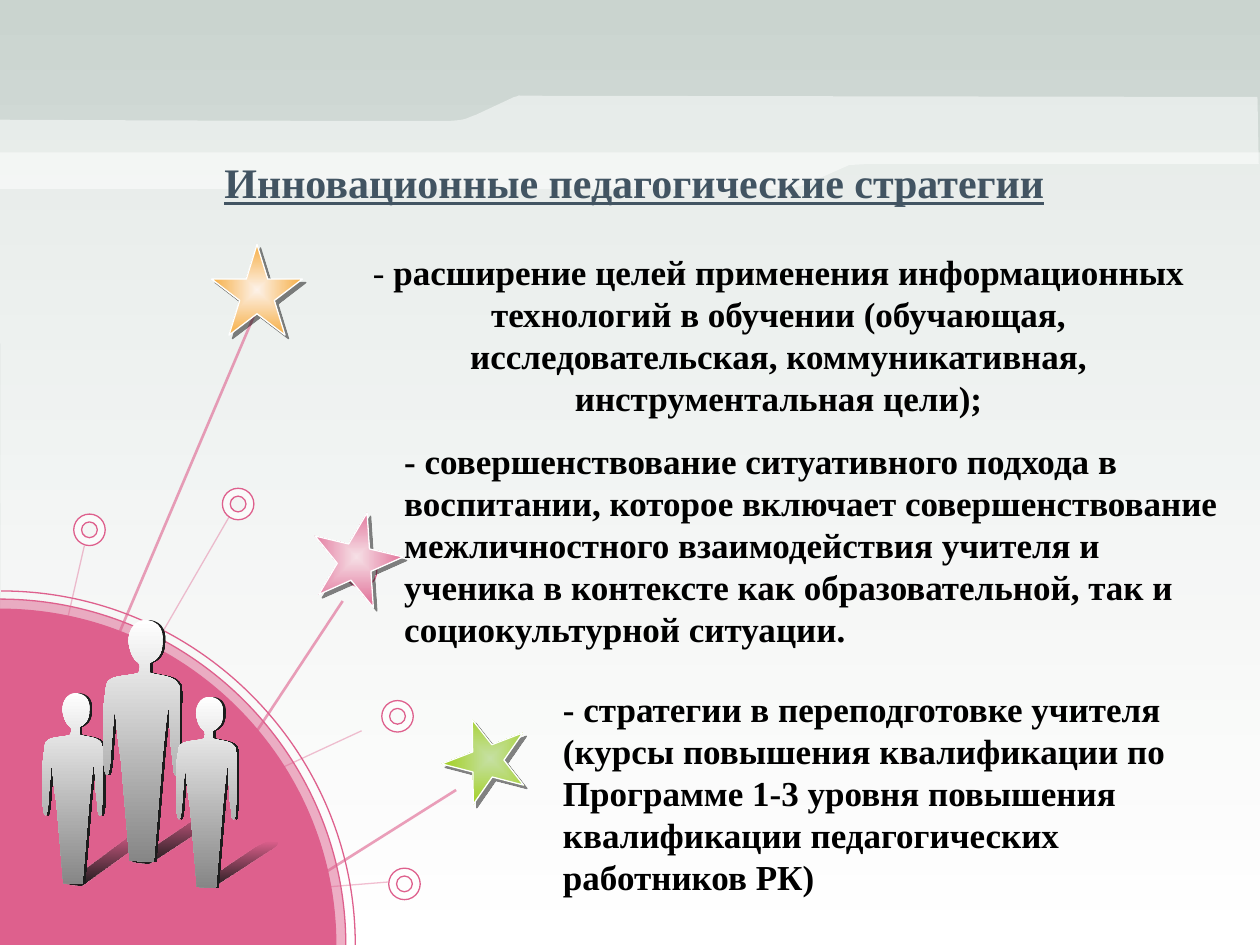
from copy import deepcopy
from dataclasses import dataclass
from typing import Optional

from lxml import etree
from pptx import Presentation, util as u
from pptx.dml.color import RGBColor
from pptx.enum import shapes, text
from pptx.oxml.ns import qn

# The slide is a grid of 100 columns by 75 rows
COLS, ROWS = 100, 75
CELL = u.Inches(0.1)


@dataclass(frozen=True)
class Theme:
    font: str = "Times New Roman"
    title_size: int = 24
    body_size: int = 20
    hairline: float = 0.75
    ray: float = 1.5
    title: str = "425462"
    body: str = "000000"
    pink: str = "DE608D"
    white: str = "FFFFFF"
    sky: str = "CAD4CF"
    star_edge: str = "FEFFFF"
    star_shadow: str = "080808"
    figure_low: str = "868686"
    cast_far: str = "1A1A1A"
    cast_near: str = "1C1C1C"


THEME = Theme()


@dataclass(frozen=True)
class Star:
    col: float
    row: float
    size: float
    turn: float
    core: str
    tip: str


@dataclass(frozen=True)
class Strategy:
    col: float
    row: float
    cols: float
    rows: float
    words: str
    lead: str = ""
    align: Optional[text.PP_ALIGN] = None


@dataclass(frozen=True)
class Ray:
    start: tuple
    end: tuple
    width: float
    opacity: int


@dataclass(frozen=True)
class Person:
    col: float
    row: float
    scale: float
    cast: tuple  # column, row, columns, rows


# Outlines: pairs are straight steps, sixes are cubic curves
HAZE = [(0.1, 74.9), (100.3, 75), (100, 12.1), (0, 12.1)]
RIBBON = [(99.8, 7.7), (42.6, 7.6), (40.1, 7.6, 41.8, 7.5, 40.8, 7.7), (37.8, 9.1),
          (36.9, 9.4, 37.2, 9.5, 35.6, 9.6), (18.7, 9.6, 0, 9.5, 0, 9.5), (0, 15),
          (62.6, 15), (63.8, 14.7), (67.4, 13.1), (69.2, 13), (99.9, 13)]
BODY = [(2.9, 3.4), (2.5, 3.2, 2.2, 2.5, 2.1, 1.7), (2.1, 0.8, 2.6, 0, 3.4, 0),
        (4.3, 0, 4.9, 0.6, 4.8, 1.7), (4.8, 2.8, 4.3, 3.2, 3.8, 3.4),
        (3.8, 3.7, 3.8, 4, 3.8, 4.2), (4.3, 4.4, 5.5, 4.4, 5.9, 4.9),
        (6.3, 5.2, 6.2, 5.9, 6.2, 6.9), (6.2, 10.8), (6.1, 11.8, 6, 12.4, 5.9, 12.3),
        (5.6, 12.5, 5.7, 11.3, 5.5, 10.4), (5.3, 6.8), (5.2, 6.9, 5, 8.8, 4.8, 10.8),
        (4.1, 19.2), (2.2, 19.1), (1.5, 11), (1.1, 8.6, 1.1, 7.1, 1, 7), (0.7, 10.5),
        (0.7, 11.3, 0.5, 12.4, 0.4, 12.3), (0.2, 12.3, 0.1, 11.3, 0.1, 10.3),
        (0, 9.3, 0.1, 7.1, 0.2, 6.2), (0.4, 5.3, 0.2, 5, 0.7, 4.7),
        (1.1, 4.4, 2.5, 4.4, 2.9, 4.2), (3, 4, 3.1, 3.6, 2.9, 3.4)]
CAST = [(0, 0.94), (0.17, 0.98), (0.88, 0.17), (1, 0.02, 0.89, 0.04, 0.87, 0.04),
        (0.83, 0.04, 0.81, 0, 0.67, 0.15)]
QUARTER = [(0, -1), (0.55, -1, 1, -0.55, 1, 0), (0, 0)]

HUB = (0, 72.5)
RAYS = [Ray(start, end, THEME.hairline, 40) for start, end in [
            ((30.8, 70), HUB), ((6.7, 43.3), HUB), ((18.2, 41), HUB), ((28.7, 58), (0, 71.3))]]
RAYS += [Ray(start, end, THEME.ray, 60) for start, end in [
            ((20.4, 24.5), HUB), ((27.2, 47.7), (5.1, 81.2)), ((36.2, 62.7), (5.1, 82.3))]]
RINGS = [(17.65, 38.75), (27.4, 44.1), (30.3, 55.6), (5.85, 40.8), (30.85, 68.9)]
RING_SIZE = 2.5
STARS = [Star(16.8, 19.4, 7.2, 0, "FDF2E9", "F6AE44"),
         Star(24.7, 40.6, 7.2, 13.4, "F6E0E6", "DE608D"),
         Star(35.6, 56.9, 6.6, 51.9, "C6E0A4", "99CC00")]
PEOPLE = [Person(3.3, 55, 0.79, (5.2, 65.7, 7.5, 4.7)),
          Person(8.1, 49.2, 1, (10.4, 64, 8.2, 4.6)),
          Person(13.9, 55.3, 0.79, (15.7, 66.7, 6.8, 3.8))]
STRATEGIES = [
    Strategy(25.6, 19.4, 72.4, 14.5,
             "расширение целей применения информационных технологий в обучении (обучающая, "
             "исследовательская, коммуникативная, инструментальная цели);",
             lead="- ", align=text.PP_ALIGN.CENTER),
    Strategy(31.1, 34.4, 66.9, 17.8,
             "- совершенствование ситуативного подхода в воспитании, которое включает "
             "совершенствование межличностного взаимодействия учителя и ученика в контексте "
             "как образовательной, так и социокультурной ситуации."),
    Strategy(43.7, 54.05, 54.3, 17.8,
             "- стратегии в переподготовке учителя (курсы повышения квалификации по Программе "
             "1-3 уровня повышения квалификации педагогических работников РК)")]


def cells(*counts: float) -> list:
    return [round(count * CELL) for count in counts]


def rgb(code: str) -> RGBColor:
    return RGBColor.from_string(code)


def fade(paint, opacity: int) -> None:
    """Set the opacity, in percent, of the first colour inside paint."""
    colour = next(paint.iter(qn("a:srgbClr")))
    etree.SubElement(colour, qn("a:alpha"), val=str(opacity * 1000))


def paint_solid(shape, colour: str, opacity: int = 100) -> None:
    shape.fill.solid()
    shape.fill.fore_color.rgb = rgb(colour)
    if opacity < 100:
        fade(shape._element.spPr.find(qn("a:solidFill")), opacity)


def paint_gradient(fill, first: str, last: str) -> None:
    fill.gradient()
    fill.gradient_angle = 270
    for stop, colour in zip(fill.gradient_stops, (first, last)):
        stop.color.rgb = rgb(colour)


def outline(shape, colour: str, width: float) -> None:
    shape.line.color.rgb = rgb(colour)
    shape.line.width = u.Pt(width)


def cast_shadow(shape, colour: str, distance: float, angle: int, opacity: int) -> None:
    shape.shadow.inherit = False
    effects = shape._element.spPr.find(qn("a:effectLst"))
    shadow = etree.SubElement(effects, qn("a:outerShdw"), blurRad="0", dist=str(u.Pt(distance)),
                              dir=str(angle * 60000), algn="ctr", rotWithShape="0")
    etree.SubElement(shadow, qn("a:srgbClr"), val=colour)
    fade(shadow, opacity)


def draw_outline(canvas, steps: list, origin=(0, 0), scale=(1, 1)):
    """Draw a closed outline, joining each three points of a curve into one cubic step."""
    spots = [cells(origin[0] + step[i] * scale[0], origin[1] + step[i + 1] * scale[1])
             for step in steps for i in range(0, len(step), 2)]
    builder = canvas.build_freeform(*spots[0], scale=1.0)
    builder.add_line_segments(spots[1:], close=True)
    shape = builder.convert_to_shape()
    segments = iter(list(shape._element.iter(qn("a:lnTo"))))
    for step in steps[1:]:
        parts = [next(segments) for _ in range(len(step) // 2)]
        if len(parts) == 3:
            curve = etree.Element(qn("a:cubicBezTo"))
            parts[0].addprevious(curve)
            for part in parts:
                curve.append(part[0])
                part.getparent().remove(part)
    shape.shadow.inherit = False
    shape.line.fill.background()
    return shape


def draw_quarter(canvas, radius: float, left: float = 0, opacity: int = 0) -> None:
    """Quarter disc in the lower left corner, edged along its arc only."""
    disc = draw_outline(canvas, QUARTER, (left, ROWS), (radius, radius))
    area = next(disc._element.iter(qn("a:path")))
    arc = deepcopy(area)
    for step in arc[2:]:
        arc.remove(step)
    arc.set("fill", "none")
    area.set("stroke", "0")
    area.addprevious(arc)
    if opacity:
        paint_solid(disc, THEME.pink, opacity)
    else:
        disc.fill.background()
    outline(disc, THEME.pink, THEME.hairline)


def draw_ray(canvas, ray: Ray) -> None:
    line = canvas.add_connector(shapes.MSO_CONNECTOR.STRAIGHT, *cells(*ray.start, *ray.end))
    outline(line, THEME.pink, ray.width)
    properties = line._element.spPr
    fade(properties.find(qn("a:ln")), ray.opacity)
    etree.SubElement(properties, qn("a:effectLst"))


def draw_ring(canvas, col: float, row: float) -> None:
    ring = canvas.add_shape(shapes.MSO_SHAPE.DONUT, *cells(col, row, RING_SIZE, RING_SIZE))
    ring.adjustments[0] = 0.25
    ring.shadow.inherit = False
    paint_solid(ring, THEME.white, 60)
    outline(ring, THEME.pink, THEME.hairline)


def draw_star(canvas, star: Star) -> None:
    shape = canvas.add_shape(shapes.MSO_SHAPE.STAR_5_POINT,
                             *cells(star.col, star.row, star.size, star.size))
    shape.rotation = star.turn
    paint_gradient(shape.fill, star.core, star.tip)
    gradient = shape._element.spPr.find(qn("a:gradFill"))
    gradient.remove(gradient.find(qn("a:lin")))
    glow = etree.SubElement(gradient, qn("a:path"), path="shape")
    etree.SubElement(glow, qn("a:fillToRect"), l="50000", t="50000", r="50000", b="50000")
    outline(shape, THEME.star_edge, THEME.hairline)
    cast_shadow(shape, THEME.star_shadow, 2.8, 45, 50)


def draw_people(canvas) -> None:
    group = canvas.add_group_shape().shapes
    for person in PEOPLE:
        cast = draw_outline(group, CAST, person.cast[:2], person.cast[2:])
        paint_gradient(cast.fill, THEME.cast_far, THEME.cast_near)
        fade(cast._element.spPr.find(qn("a:gradFill")), 0)
    for person in PEOPLE:
        body = draw_outline(group, BODY, (person.col, person.row), (person.scale,) * 2)
        paint_gradient(body.fill, THEME.white, THEME.figure_low)
        cast_shadow(body, THEME.cast_near, 1.5, 0, 100)


def add_words(canvas, box: tuple, size: int, colour: str):
    frame = canvas.add_textbox(*cells(*box)).text_frame
    frame.word_wrap = True
    paragraph = frame.paragraphs[0]
    font = paragraph.font
    font.name, font.size, font.color.rgb = THEME.font, u.Pt(size), rgb(colour)
    return frame, paragraph


def draw_strategy(canvas, item: Strategy) -> None:
    frame, paragraph = add_words(canvas, (item.col, item.row, item.cols, item.rows),
                                 THEME.body_size, THEME.body)
    frame.auto_size = text.MSO_AUTO_SIZE.SHAPE_TO_FIT_TEXT
    paragraph.alignment = item.align
    if item.lead:
        paragraph.add_run().text = item.lead
    words = paragraph.add_run()
    words.text = item.words
    words.font.bold = True


def draw_title(canvas) -> None:
    frame, paragraph = add_words(canvas, (4.4, 13.1, 91.9, 2.7), THEME.title_size, THEME.title)
    frame.vertical_anchor = text.MSO_ANCHOR.MIDDLE
    paragraph.alignment = text.PP_ALIGN.CENTER
    paragraph.font.bold = paragraph.font.underline = True
    paragraph.add_run().text = "Инновационные педагогические стратегии"


def main() -> None:
    deck = Presentation()
    deck.slide_width, deck.slide_height = cells(COLS, ROWS)
    slide = deck.slides.add_slide(deck.slide_layouts[6])
    canvas = slide.shapes

    # Backdrop
    paint_gradient(slide.background.fill, THEME.sky, THEME.white)
    for band in (HAZE, RIBBON):
        paint_solid(draw_outline(canvas, band), THEME.white, 50)

    # Sun with rays and rings
    draw_quarter(canvas, 28.1, left=0.1)
    for ray in RAYS:
        draw_ray(canvas, ray)
    draw_quarter(canvas, 27.45, opacity=50)
    draw_quarter(canvas, 26.65, opacity=100)
    for ring in RINGS:
        draw_ring(canvas, *ring)

    # Strategies, their stars and the title
    for item in STRATEGIES:
        draw_strategy(canvas, item)
    for star in STARS:
        draw_star(canvas, star)
    draw_title(canvas)

    # Three figures
    draw_people(canvas)
    deck.save("out.pptx")


if __name__ == "__main__":
    main()
